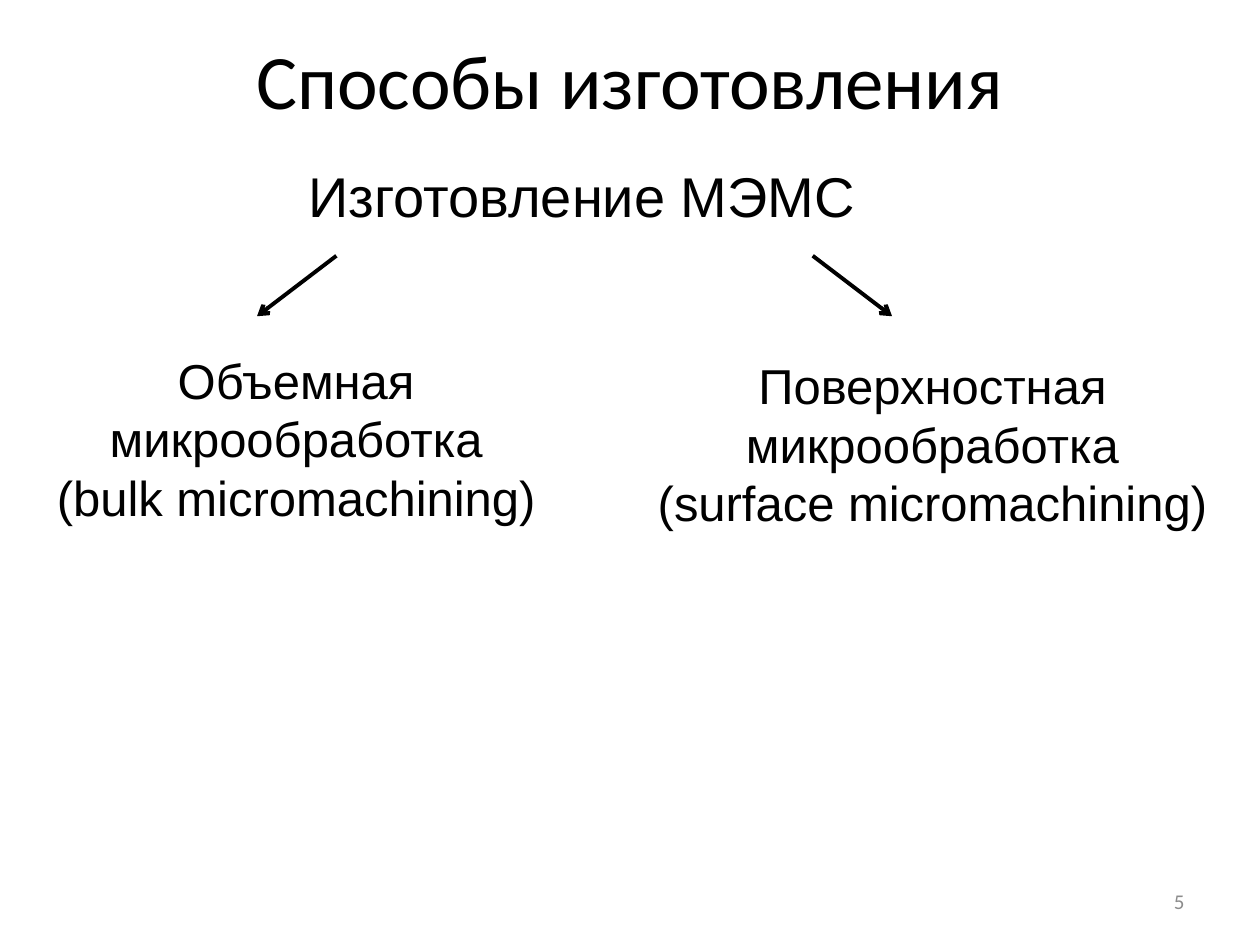
import pptx
import pptx.util
import pptx.dml.color
import pptx.enum.shapes
import pptx.enum.text
import lxml.etree

THEME = {
    "text": pptx.dml.color.RGBColor(0x00, 0x00, 0x00),
    "muted": pptx.dml.color.RGBColor(0x8C, 0x8C, 0x8C),
    "heading_font": "Calibri",
    "body_font": "Arial",
    "title": 44,
    "subject": 32,
    "method": 28,
    "number": 12,
    "arrow": 2.25,
}
ALIGN = pptx.enum.text.PP_ALIGN
ANCHOR = pptx.enum.text.MSO_ANCHOR
DRAWING = "{http://schemas.openxmlformats.org/drawingml/2006/main}"

presentation = pptx.Presentation()
presentation.slide_width = pptx.util.Inches(10)
presentation.slide_height = pptx.util.Inches(7.5)
slide = presentation.slides.add_slide(presentation.slide_layouts.get_by_name("Title Only"))


def box(left, top, width, height):
    return [pptx.util.Inches(length) for length in (left, top, width, height)]


def write(shape, text, size, font, align, anchor=ANCHOR.TOP, color="text"):
    """Fill a shape with text in one uniform style."""
    frame = shape.text_frame
    frame.word_wrap = True
    frame.vertical_anchor = anchor
    frame.text = text
    for paragraph in frame.paragraphs:
        paragraph.alignment = align
        for run in paragraph.runs:
            run.font.size = pptx.util.Pt(THEME[size])
            run.font.name = THEME[font]
            run.font.color.rgb = THEME[color]


# Title and subject
title = slide.shapes.title
title.left, title.top, title.width, title.height = box(0.5, 0, 9, 1.25)
write(title, "Способы изготовления", "title", "heading_font", ALIGN.CENTER, ANCHOR.MIDDLE)

subject = slide.shapes.add_textbox(*box(2.35, 1.23, 5.25, 0.64))
write(subject, "Изготовление МЭМС", "subject", "body_font", ALIGN.LEFT)

# Arrows fan out from the subject to the two methods
for start, reach in ((2.67, -0.63), (6.45, 0.63)):
    arrow = slide.shapes.add_connector(
        pptx.enum.shapes.MSO_CONNECTOR.STRAIGHT,
        *box(start, 2.03, start + reach, 2.51),
    )
    arrow.line.color.rgb = THEME["text"]
    arrow.line.width = pptx.util.Pt(THEME["arrow"])
    lxml.etree.SubElement(arrow.line._get_or_add_ln(), DRAWING + "tailEnd", type="arrow")
    lxml.etree.SubElement(arrow._element.spPr, DRAWING + "effectLst")

# Methods
methods = (
    ((-0.15, 2.73, 5, 2.46), "Объемная микрообработка\n(bulk micromachining)"),
    ((4.8, 2.77, 5.2, 2.46), "Поверхностная\nмикрообработка\n(surface micromachining)"),
)
for place, text in methods:
    method = slide.shapes.add_textbox(*box(*place))
    write(method, text, "method", "body_font", ALIGN.CENTER)

# Slide number
number = slide.shapes.add_textbox(*box(7.17, 6.95, 2.33, 0.4))
write(number, "5", "number", "heading_font", ALIGN.RIGHT, ANCHOR.MIDDLE, "muted")

presentation.save("out.pptx")
